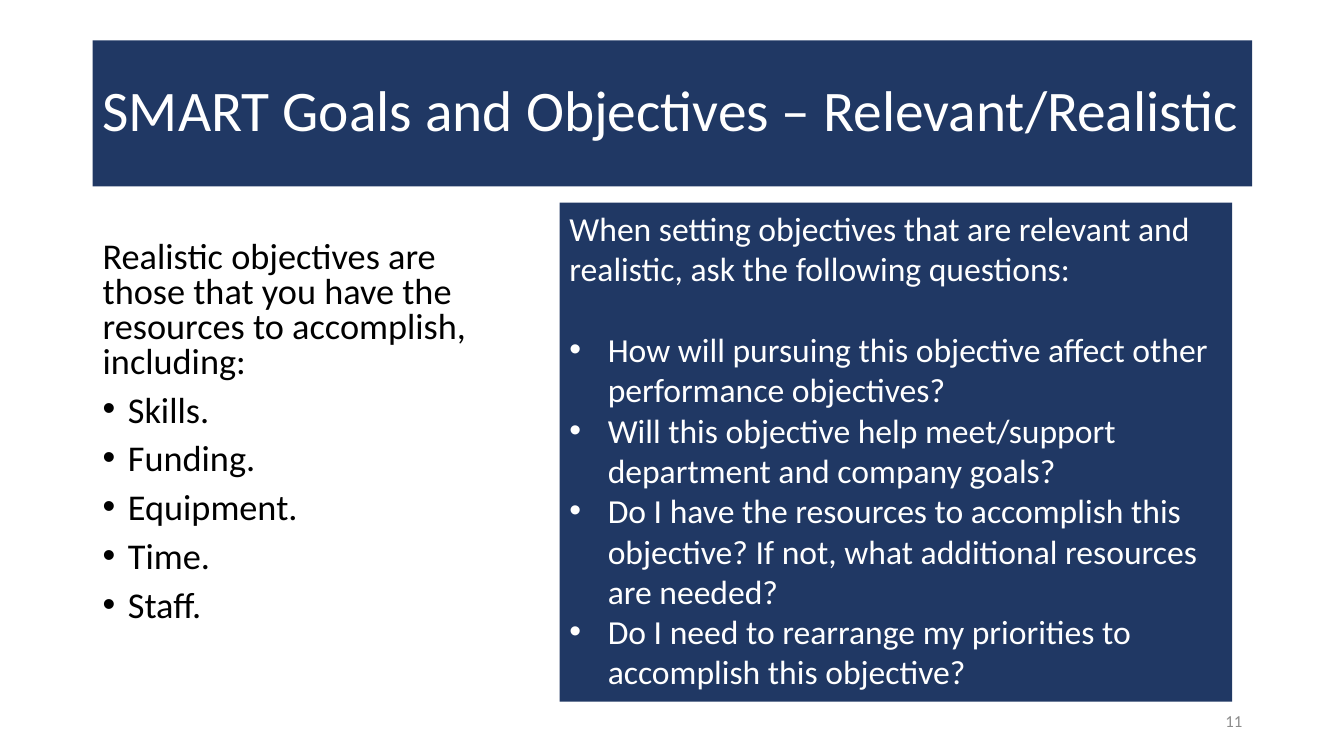
import pptx
import pptx.dml.color
import pptx.enum.shapes
import pptx.enum.text
import pptx.oxml
import pptx.oxml.ns
import pptx.util

Inches = pptx.util.Inches
Pt = pptx.util.Pt
Align = pptx.enum.text.PP_ALIGN
Anchor = pptx.enum.text.MSO_ANCHOR

NAVY = pptx.dml.color.RGBColor(0x20, 0x38, 0x64)
WHITE = pptx.dml.color.RGBColor(0xFF, 0xFF, 0xFF)
BLACK = pptx.dml.color.RGBColor(0x00, 0x00, 0x00)
GREY = pptx.dml.color.RGBColor(0x8C, 0x8C, 0x8C)


def add_panel(left, top, width, height, fill=None, anchor=Anchor.TOP):
    """Add a rectangle, filled or clear, and return its text frame."""
    panel = slide.shapes.add_shape(
        pptx.enum.shapes.MSO_SHAPE.RECTANGLE,
        Inches(left), Inches(top), Inches(width), Inches(height))
    panel.shadow.inherit = False
    panel.line.fill.background()
    if fill is None:
        panel.fill.background()
    else:
        panel.fill.solid()
        panel.fill.fore_color.rgb = fill
    panel.text_frame.word_wrap = True
    panel.text_frame.vertical_anchor = anchor
    return panel.text_frame


def write(frame, lines, size, color, indent=0, **paragraph_format):
    """Write one paragraph per line; all after the first are bulleted."""
    for number, line in enumerate(lines):
        paragraph = frame.add_paragraph() if number else frame.paragraphs[0]
        paragraph.text = line
        paragraph.alignment = Align.LEFT
        for attribute, value in paragraph_format.items():
            setattr(paragraph, attribute, value)
        font = paragraph.runs[0].font
        font.name, font.size = "Calibri", Pt(size)
        font.color.rgb = color
        if number:
            properties = paragraph._p.get_or_add_pPr()
            properties.set("marL", str(Inches(indent)))
            properties.set("indent", str(-Inches(indent)))
            for tag, key, value in (("a:buFont", "typeface", "Arial"),
                                    ("a:buChar", "char", "•")):
                bullet = pptx.oxml.parse_xml(
                    f'<{tag} {pptx.oxml.ns.nsdecls("a")} {key}="{value}"/>')
                properties.append(bullet)


presentation = pptx.Presentation()
presentation.slide_width = Inches(13.33)
presentation.slide_height = Inches(7.5)
slide = presentation.slides.add_slide(presentation.slide_layouts[6])

# Title band; no right inset, so the title stays on one line
title = add_panel(0.92, 0.4, 11.5, 1.45, NAVY, Anchor.MIDDLE)
title.margin_right = 0
write(title, ["SMART Goals and Objectives – Relevant/Realistic"], 41, WHITE,
      line_spacing=0.9)

# Resources on the left
resources = add_panel(0.92, 2.35, 4.1, 4.01)
write(resources, [
    "Realistic objectives are those that you have the resources to "
    "accomplish, including:",
    "Skills.",
    "Funding.",
    "Equipment.",
    "Time.",
    "Staff.",
], 25.9, BLACK, indent=0.25, line_spacing=0.8, space_before=Pt(10))

# Slide number
slide_number = add_panel(9.42, 6.95, 3, 0.4, anchor=Anchor.MIDDLE)
write(slide_number, ["11"], 12, GREY, alignment=Align.RIGHT)

# Questions on the right, set one line below their introduction
questions = add_panel(5.55, 2.01, 6.67, 4.95, NAVY)
write(questions, [
    "When setting objectives that are relevant and realistic, ask the "
    "following questions:",
    "How will pursuing this objective affect other performance objectives?",
    "Will this objective help meet/support department and company goals?",
    "Do I have the resources to accomplish this objective? If not, what "
    "additional resources are needed?",
    "Do I need to rearrange my priorities to accomplish this objective?",
], 24, WHITE, indent=0.38)
questions.paragraphs[1].space_before = Pt(29)

presentation.save("out.pptx")
